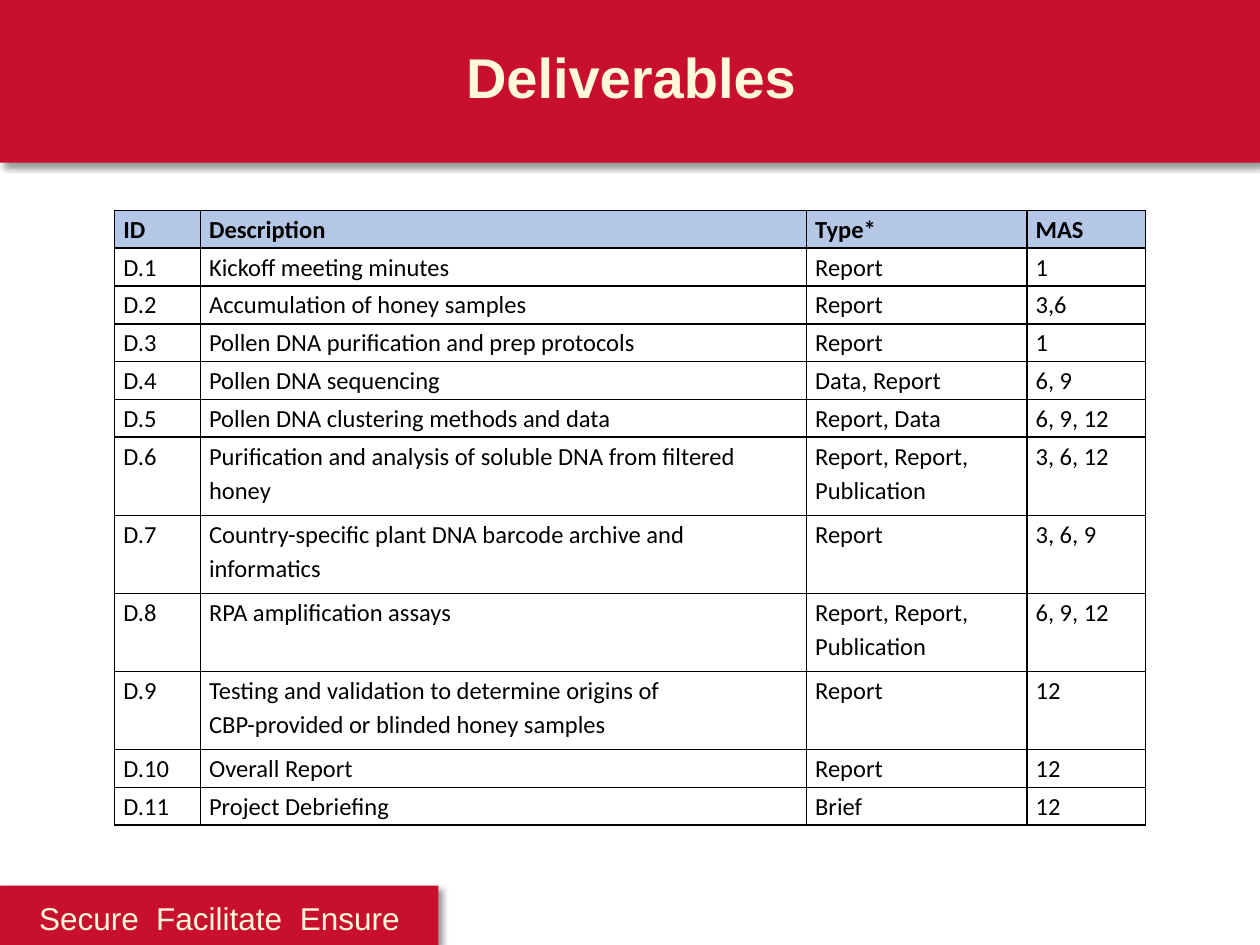
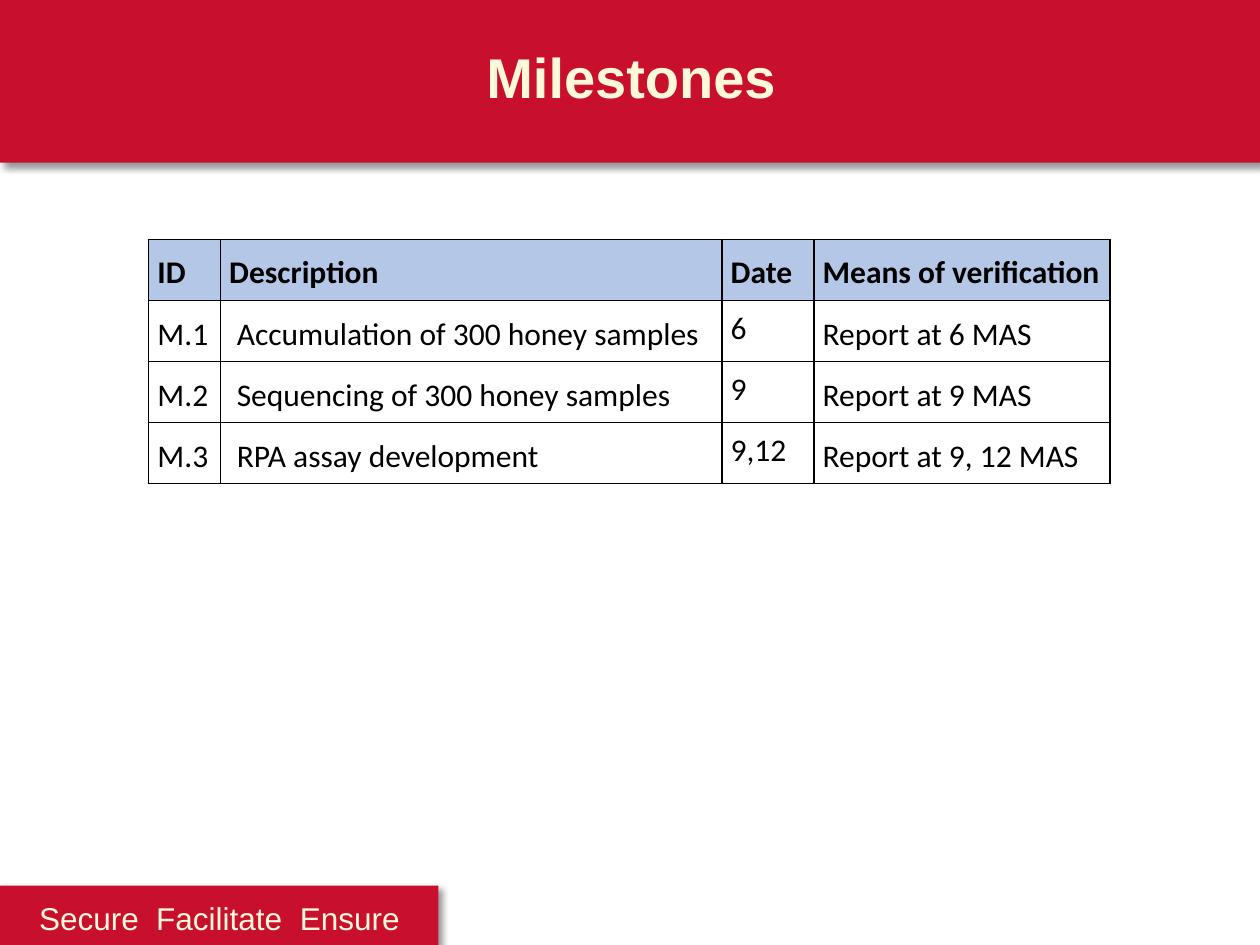
from lxml import etree
from pptx import Presentation, util as u
from pptx.dml.color import RGBColor
from pptx.enum import shapes, text
from pptx.oxml import ns

RED = RGBColor(0xC8, 0x10, 0x2E)
CREAM = RGBColor(0xFF, 0xF9, 0xD9)
HEADER_BLUE = RGBColor(0xB4, 0xC7, 0xE7)
BLACK = RGBColor(0, 0, 0)

# Grid: 100 columns by 75 rows
COLUMNS, ROWS = 100, 75
BAND_HEIGHT = 12.9
FOOTER_TOP, FOOTER_WIDTH = 70.3, 34.8

DELIVERABLES = [
    ["ID", "Description", "Type*", "MAS"],
    ["D.1", "Kickoff meeting minutes", "Report", "1"],
    ["D.2", "Accumulation of honey samples", "Report", "3,6"],
    ["D.3", "Pollen DNA purification and prep protocols", "Report", "1"],
    ["D.4", "Pollen DNA sequencing", "Data, Report", "6, 9"],
    ["D.5", "Pollen DNA clustering methods and data", "Report, Data", "6, 9, 12"],
    ["D.6", "Purification and analysis of soluble DNA from filtered honey",
     "Report, Report, Publication", "3, 6, 12"],
    ["D.7", "Country-specific plant DNA barcode archive and informatics",
     "Report", "3, 6, 9"],
    ["D.8", "RPA amplification assays", "Report, Report, Publication", "6, 9, 12"],
    ["D.9", "Testing and validation to determine origins of\n"
            "CBP-provided or blinded honey samples", "Report", "12"],
    ["D.10", "Overall Report", "Report", "12"],
    ["D.11", "Project Debriefing", "Brief", "12"],
]
TWO_LINE_ROWS = range(6, 10)

MILESTONES = [
    ["ID", "Description", "Date", "Means of verification"],
    ["M.1", "Accumulation of 300 honey samples", "6", "Report at 6 MAS"],
    ["M.2", "Sequencing of 300 honey samples", "9", "Report at 9 MAS"],
    ["M.3", "RPA assay development", "9,12", "Report at 9, 12 MAS"],
]


def add_xml(parent, tag, **attributes):
    return etree.SubElement(parent, ns.qn(tag), attributes)


class SlideBuilder:
    def __init__(self, deck):
        self.deck = deck
        self.page = None

    def x(self, columns):
        return u.Emu(round(self.deck.slide_width * columns / COLUMNS))

    def y(self, rows):
        return u.Emu(round(self.deck.slide_height * rows / ROWS))

    def area(self, left, top, width, height):
        return self.x(left), self.y(top), self.x(width), self.y(height)

    def style(self, para, size, name, color, bold=False):
        para.font.size = u.Pt(size)
        para.font.name = name
        para.font.bold = bold
        para.font.color.rgb = color

    def start(self, title):
        self.page = self.deck.slides.add_slide(self.deck.slide_layouts[6])
        self.band(0, 0, COLUMNS, BAND_HEIGHT)
        self.footer()
        self.title(title)

    def band(self, left, top, width, height):
        box = self.page.shapes.add_shape(
            shapes.MSO_SHAPE.RECTANGLE, *self.area(left, top, width, height))
        box.fill.solid()
        box.fill.fore_color.rgb = RED
        box.line.fill.background()
        # Soft shadow towards the lower right
        box.shadow.inherit = False
        effects = box._element.spPr.find(ns.qn("a:effectLst"))
        shadow = add_xml(effects, "a:outerShdw", blurRad=str(u.Pt(4)),
                         dist=str(u.Pt(3)), dir=str(45 * 60000),
                         algn="tl", rotWithShape="0")
        color = add_xml(shadow, "a:srgbClr", val=str(BLACK))
        add_xml(color, "a:alpha", val="40000")
        return box

    def footer(self):
        box = self.band(0, FOOTER_TOP, FOOTER_WIDTH, ROWS - FOOTER_TOP)
        frame = box.text_frame
        frame.vertical_anchor = text.MSO_ANCHOR.TOP
        frame.margin_left, frame.margin_right = self.x(3.1), 0
        para = frame.paragraphs[0]
        para.text = "Secure\tFacilitate\tEnsure"
        para.alignment = text.PP_ALIGN.LEFT
        para.line_spacing = 1.19
        stops = add_xml(para._p.get_or_add_pPr(), "a:tabLst")
        for stop in (9.3, 20.7):
            add_xml(stops, "a:tab", pos=str(self.x(stop)), algn="l")
        self.style(para, 18, "Arial", CREAM)

    def title(self, words):
        box = self.page.shapes.add_textbox(*self.area(10.1, 2.9, 80, 6.4))
        box.text_frame.word_wrap = True
        para = box.text_frame.paragraphs[0]
        para.text = words
        para.alignment = text.PP_ALIGN.CENTER
        self.style(para, 32, "Arial", CREAM, bold=True)

    def table(self, left, top, widths, heights, rows, size, margin_rows):
        frame = self.page.shapes.add_table(
            len(rows), len(widths),
            *self.area(left, top, sum(widths), sum(heights)))
        table = frame.table
        table.first_row = table.horz_banding = False
        for column, width in zip(table.columns, widths):
            column.width = self.x(width)
        for row, height in zip(table.rows, heights):
            row.height = self.y(height)
        for r, row in enumerate(rows):
            for c, words in enumerate(row):
                self.cell(table.cell(r, c), words, size, margin_rows, r == 0)
        return table

    def cell(self, cell, words, size, margin_rows, header):
        cell.margin_left = cell.margin_right = self.x(0.7)
        cell.margin_top = cell.margin_bottom = self.y(margin_rows)
        # Black border on every side
        for side in ("a:lnL", "a:lnR", "a:lnT", "a:lnB"):
            line = add_xml(cell._tc.get_or_add_tcPr(), side, w=str(u.Pt(1)))
            add_xml(add_xml(line, "a:solidFill"), "a:srgbClr", val=str(BLACK))
        if header:
            cell.fill.solid()
            cell.fill.fore_color.rgb = HEADER_BLUE
        else:
            cell.fill.background()
        cell.text = words
        for para in cell.text_frame.paragraphs:
            para.line_spacing = 1.15
            self.style(para, size, "Calibri", BLACK, bold=header)


def main():
    deck = Presentation()
    deck.slide_width, deck.slide_height = u.Inches(10), u.Inches(7.5)
    builder = SlideBuilder(deck)

    # Deliverables
    builder.start("Deliverables")
    heights = [6.2 if r in TWO_LINE_ROWS else 3 for r in range(len(DELIVERABLES))]
    builder.table(9.1, 16.7, [6.8, 48.1, 17.5, 9.4], heights,
                  DELIVERABLES, size=14, margin_rows=0)

    # Milestones
    builder.start("Milestones")
    table = builder.table(11.8, 19, [5.7, 39.8, 7.3, 23.5],
                          [4.8] * len(MILESTONES), MILESTONES,
                          size=18, margin_rows=0.7)
    # Body rows: indented descriptions, single-spaced dates
    for r in range(1, len(MILESTONES)):
        table.cell(r, 1).margin_left = builder.x(1.3)
        table.cell(r, 2).text_frame.paragraphs[0].line_spacing = 1.0

    deck.save("out.pptx")


if __name__ == "__main__":
    main()
